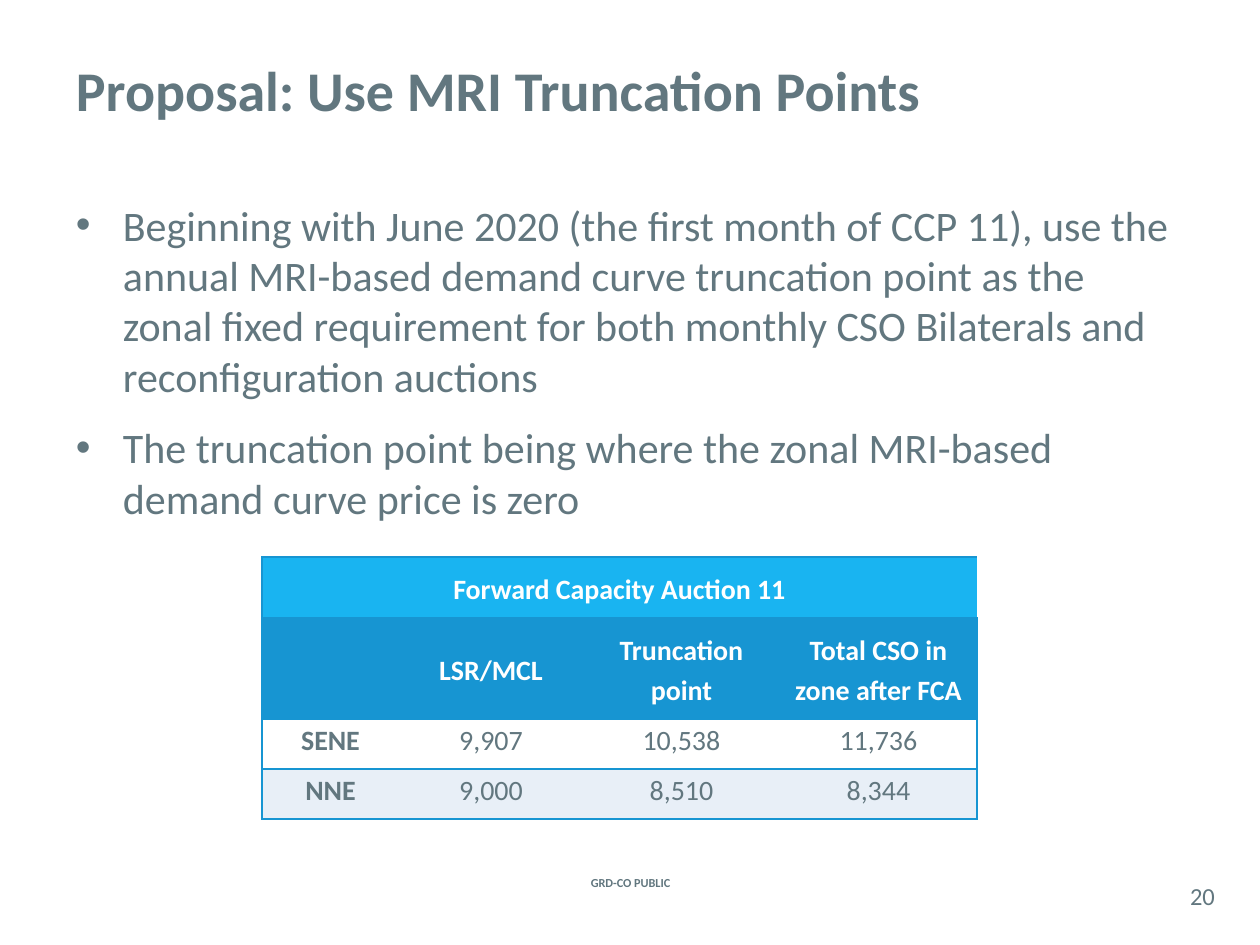
from dataclasses import dataclass

from lxml.etree import SubElement
from pptx import Presentation
from pptx.dml.color import RGBColor
from pptx.enum.text import MSO_ANCHOR, PP_ALIGN
from pptx.oxml.ns import qn
from pptx.util import Pt

EMU_PER_PX = 914400 / 126


@dataclass(frozen=True)
class Theme:
    font: str = "Calibri"
    text: str = "62777F"
    light: str = "FFFFFF"
    banner: str = "19B4F1"
    accent: str = "1795D2"
    band: str = "E8EFF7"
    title_size: int = 32
    body_size: int = 24
    table_size: int = 16
    number_size: int = 14
    footer_size: int = 7


THEME = Theme()


def px(length):
    return round(length * EMU_PER_PX)


def add_bullet(paragraph, indent):
    properties = paragraph._p.get_or_add_pPr()
    properties.set("marL", str(px(indent)))
    properties.set("indent", str(-px(indent)))
    SubElement(properties, qn("a:buFont"), typeface="Arial")
    SubElement(properties, qn("a:buChar"), char="•")


def write_text(frame, text, size, color=THEME.text, bold=False,
               align=PP_ALIGN.LEFT, line_spacing=None, bullet_indent=0, gap=0):
    """Write each line of text as a paragraph, with gap points between them."""
    frame.word_wrap = True
    for index, line in enumerate(text.split("\n")):
        paragraph = frame.add_paragraph() if index else frame.paragraphs[0]
        if bullet_indent:
            add_bullet(paragraph, bullet_indent)
        paragraph.alignment = align
        if line_spacing:
            paragraph.line_spacing = line_spacing
        if index and gap:
            paragraph.space_before = Pt(gap)
        run = paragraph.add_run()
        run.text = line
        run.font.name = THEME.font
        run.font.size = Pt(size)
        run.font.bold = bold
        run.font.color.rgb = RGBColor.from_string(color)


def add_text(slide, box, text, size, anchor=MSO_ANCHOR.MIDDLE, inset=(0, 0), **text_format):
    frame = slide.shapes.add_textbox(*map(px, box)).text_frame
    frame.margin_left = frame.margin_right = px(inset[0])
    frame.margin_top = frame.margin_bottom = px(inset[1])
    frame.vertical_anchor = anchor
    write_text(frame, text, size, **text_format)


def set_borders(cell, sides):
    """Line the named sides (L, R, T, B) and clear the others."""
    properties = cell._tc.get_or_add_tcPr()
    for side in "LRTB":
        line = SubElement(properties, qn(f"a:ln{side}"), w=str(Pt(1)))
        if side in sides:
            fill = SubElement(line, qn("a:solidFill"))
            SubElement(fill, qn("a:srgbClr"), val=THEME.accent)
        else:
            SubElement(line, qn("a:noFill"))


def add_auction_table(slide, left, top, columns, rows):
    values = [
        ["Forward Capacity Auction 11", "", "", ""],
        ["", "LSR/MCL", "Truncation point", "Total CSO in zone after FCA"],
        ["SENE", "9,907", "10,538", "11,736"],
        ["NNE", "9,000", "8,510", "8,344"],
    ]
    fills = [THEME.banner, THEME.accent, THEME.light, THEME.band]
    box = (left, top, sum(columns), sum(rows))
    table = slide.shapes.add_table(len(rows), len(columns), *map(px, box)).table
    table.first_row = table.horz_banding = False
    for column, width in zip(table.columns, columns):
        column.width = px(width)
    for row, height in zip(table.rows, rows):
        row.height = px(height)

    last = len(columns) - 1
    for row_index, (row_values, fill) in enumerate(zip(values, fills)):
        heading = row_index < 2
        for column_index, value in enumerate(row_values):
            cell = table.cell(row_index, column_index)
            cell.margin_left = cell.margin_right = px(9)
            cell.margin_top = cell.margin_bottom = 0
            cell.vertical_anchor = MSO_ANCHOR.MIDDLE if heading else MSO_ANCHOR.TOP
            set_borders(cell, "TB" + "L" * (column_index == 0) + "R" * (column_index == last))
            cell.fill.solid()
            cell.fill.fore_color.rgb = RGBColor.from_string(fill)
            if value:
                write_text(cell.text_frame, value, THEME.table_size,
                           color=THEME.light if heading else THEME.text,
                           bold=heading or column_index == 0,
                           align=PP_ALIGN.CENTER, line_spacing=1.15)
    table.cell(0, 0).merge(table.cell(0, last))


def add_footer(slide, left, top):
    add_text(slide, (left, top, 185, 21), "GRD-CO PUBLIC", THEME.footer_size,
             bold=True, align=PP_ALIGN.CENTER)
    add_text(slide, (left + 638, top + 5, 53, 37), "20", THEME.number_size,
             align=PP_ALIGN.CENTER)


def add_proposal(slide, left, top, width):
    inset = (13, 6)
    add_text(slide, (left, top, width, 158), "Proposal: Use MRI Truncation Points",
             THEME.title_size, inset=inset, bold=True)
    add_text(slide, (left, top + 183, width, 663),
             "Beginning with June 2020 (the first month of CCP 11), use the annual "
             "MRI-based demand curve truncation point as the zonal fixed requirement "
             "for both monthly CSO Bilaterals and reconfiguration auctions\n"
             "The truncation point being where the zonal MRI-based demand curve price is zero",
             THEME.body_size, anchor=MSO_ANCHOR.TOP, inset=inset, bullet_indent=47, gap=12)


def main():
    presentation = Presentation()
    presentation.slide_width = px(1260)
    presentation.slide_height = px(945)
    slide = presentation.slides.add_slide(presentation.slide_layouts[6])
    add_footer(slide, 538, 872)
    add_proposal(slide, 63, 10, 1134)
    add_auction_table(slide, 262, 557, columns=[137, 184, 197, 197], rows=[61, 101, 50, 50])
    presentation.save("out.pptx")


if __name__ == "__main__":
    main()
